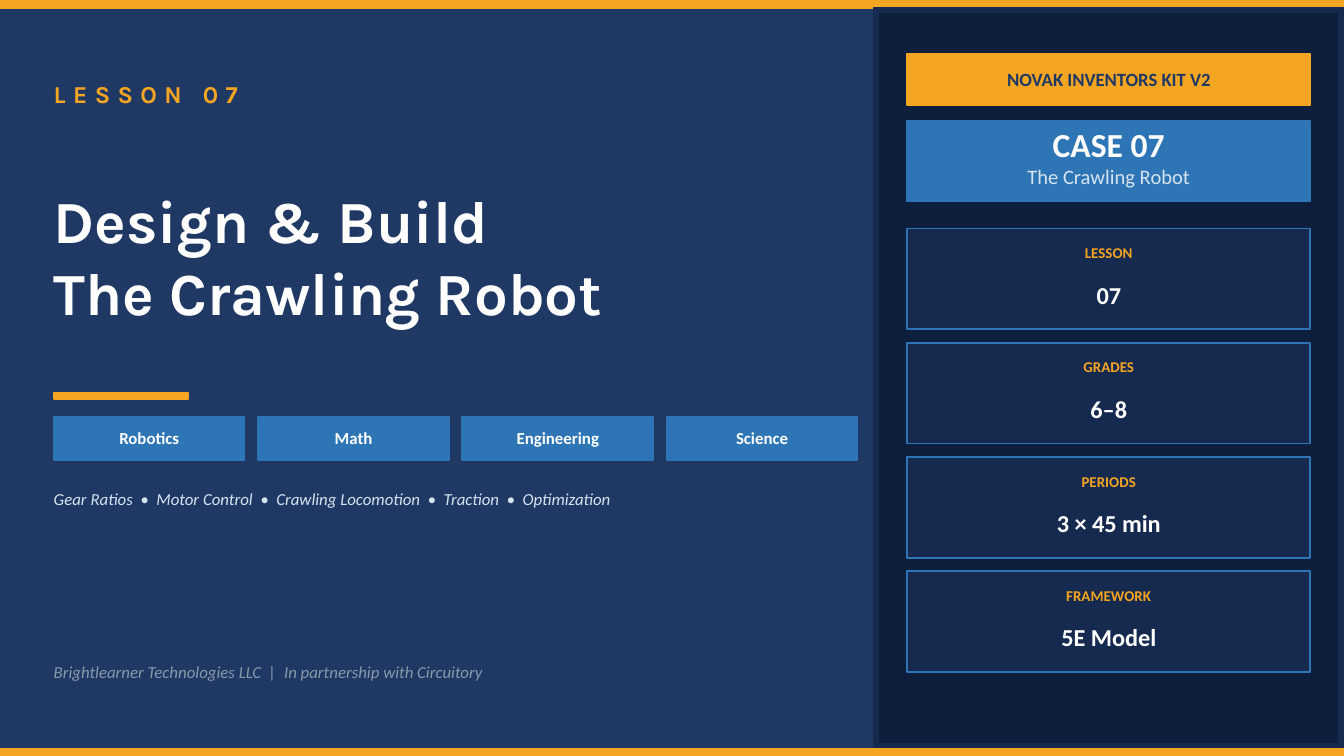
from pptx import Presentation
from pptx.dml.color import RGBColor as RGB
from pptx.enum.shapes import MSO_SHAPE as Shape
from pptx.enum.text import MSO_ANCHOR as Anchor, MSO_AUTO_SIZE as Fit, PP_ALIGN as Align
from pptx.util import Inches, Pt

HUES = {
    "navy": "1F3864", "panel": "162A4F", "deep": "0D1F3C", "gold": "F4A522",
    "blue": "2E75B6", "white": "FFFFFF", "pale": "D6E4F0", "grey": "8899AA",
}
TITLE = ["Design & Build", "The Crawling Robot"]
TAGS = ["Robotics", "Math", "Engineering", "Science"]
TOPICS = ["Gear Ratios", "Motor Control", "Crawling Locomotion", "Traction", "Optimization"]
CREDIT = "Brightlearner Technologies LLC  |  In partnership with Circuitory"
FACTS = [("LESSON", "07"), ("GRADES", "6–8"), ("PERIODS", "3 × 45 min"), ("FRAMEWORK", "5E Model")]

LEFT, WIDE = 0.4, 5.9
SIDE, SPAN = 6.75, 3


def hue(name):
    """Return the named colour."""
    return RGB.from_string(HUES[name])


def write(item, lines, size, color="white", font="Calibri", bold=False,
          italic=False, align=Align.LEFT, anchor=Anchor.MIDDLE, track=0):
    """Fill a shape with formatted lines of text."""
    frame = item.text_frame
    frame.word_wrap = True
    frame.auto_size = Fit.NONE
    frame.vertical_anchor = anchor
    frame.margin_left = frame.margin_right = frame.margin_top = frame.margin_bottom = 0
    for n, line in enumerate(lines):
        para = frame.add_paragraph() if n else frame.paragraphs[0]
        para.alignment = align
        run = para.add_run()
        run.text = line
        face = run.font
        face.name, face.size, face.bold, face.italic = font, Pt(size), bold, italic
        face.color.rgb = hue(color)
        if track:
            run._r.get_or_add_rPr().set("spc", str(track * 100))


def block(slide, x, y, w, h, fill, edge=None):
    """Add a filled rectangle with a thin outline."""
    item = slide.shapes.add_shape(Shape.RECTANGLE, *map(Inches, (x, y, w, h)))
    item.shadow.inherit = False
    item.fill.solid()
    item.fill.fore_color.rgb = hue(fill)
    item.line.color.rgb = hue(edge or fill)
    item.line.width = Pt(1)
    return item


def label(slide, x, y, w, h, text, size, **style):
    """Add a text box with one line."""
    item = slide.shapes.add_textbox(*map(Inches, (x, y, w, h)))
    write(item, [text], size, **style)


def main():
    """Build the lesson cover."""
    deck = Presentation()
    deck.slide_width = Inches(10)
    deck.slide_height = deck.slide_width * 9 // 16
    slide = deck.slides.add_slide(deck.slide_layouts[5])
    slide.background.fill.solid()
    slide.background.fill.fore_color.rgb = hue("navy")
    mid = {"align": Align.CENTER}
    strong = {"align": Align.CENTER, "bold": True}

    for y in (0, 5.57):
        block(slide, 0, y, 10, 0.06, "gold")
    block(slide, 6.5, 0.06, 3.5, 5.5, "panel")
    block(slide, 6.55, 0.1, 3.4, 5.42, "deep")

    kit = block(slide, SIDE, 0.4, SPAN, 0.38, "gold")
    write(kit, ["NOVAK INVENTORS KIT V2"], 10, color="navy", **strong)
    block(slide, SIDE, 0.9, SPAN, 0.6, "blue")
    label(slide, SIDE, 0.9, SPAN, 0.32, "CASE 07", 18, anchor=Anchor.BOTTOM, **strong)
    label(slide, SIDE, 1.22, SPAN, 0.28, TITLE[1], 11, color="pale", anchor=Anchor.TOP, **mid)

    for n, (name, value) in enumerate(FACTS):
        y = 1.7 + n * 0.85
        block(slide, SIDE, y, SPAN, 0.75, "panel", "blue")
        label(slide, SIDE, y + 0.04, SPAN, 0.28, name, 8, color="gold", **strong)
        label(slide, SIDE, y + 0.3, SPAN, 0.38, value, 13, **strong)

    label(slide, LEFT, 0.5, WIDE, 0.4, "LESSON 07", 13, color="gold", font="Karla", bold=True, track=4)
    head = slide.shapes.title
    head.left, head.top, head.width, head.height = map(Inches, (LEFT, 0.95, WIDE, 1.9))
    write(head, TITLE, 32, font="Karla", bold=True)

    block(slide, LEFT, 2.92, 1, 0.05, "gold")
    for n, tag in enumerate(TAGS):
        chip = block(slide, LEFT + n * 1.52, 3.1, 1.42, 0.32, "blue")
        write(chip, [tag], 9, **strong)
    label(slide, LEFT, 3.55, WIDE, 0.32, "  •  ".join(TOPICS), 9, color="pale", italic=True)
    label(slide, LEFT, 4.85, WIDE, 0.3, CREDIT, 9, color="grey", italic=True)

    deck.save("out.pptx")


if __name__ == "__main__":
    main()
